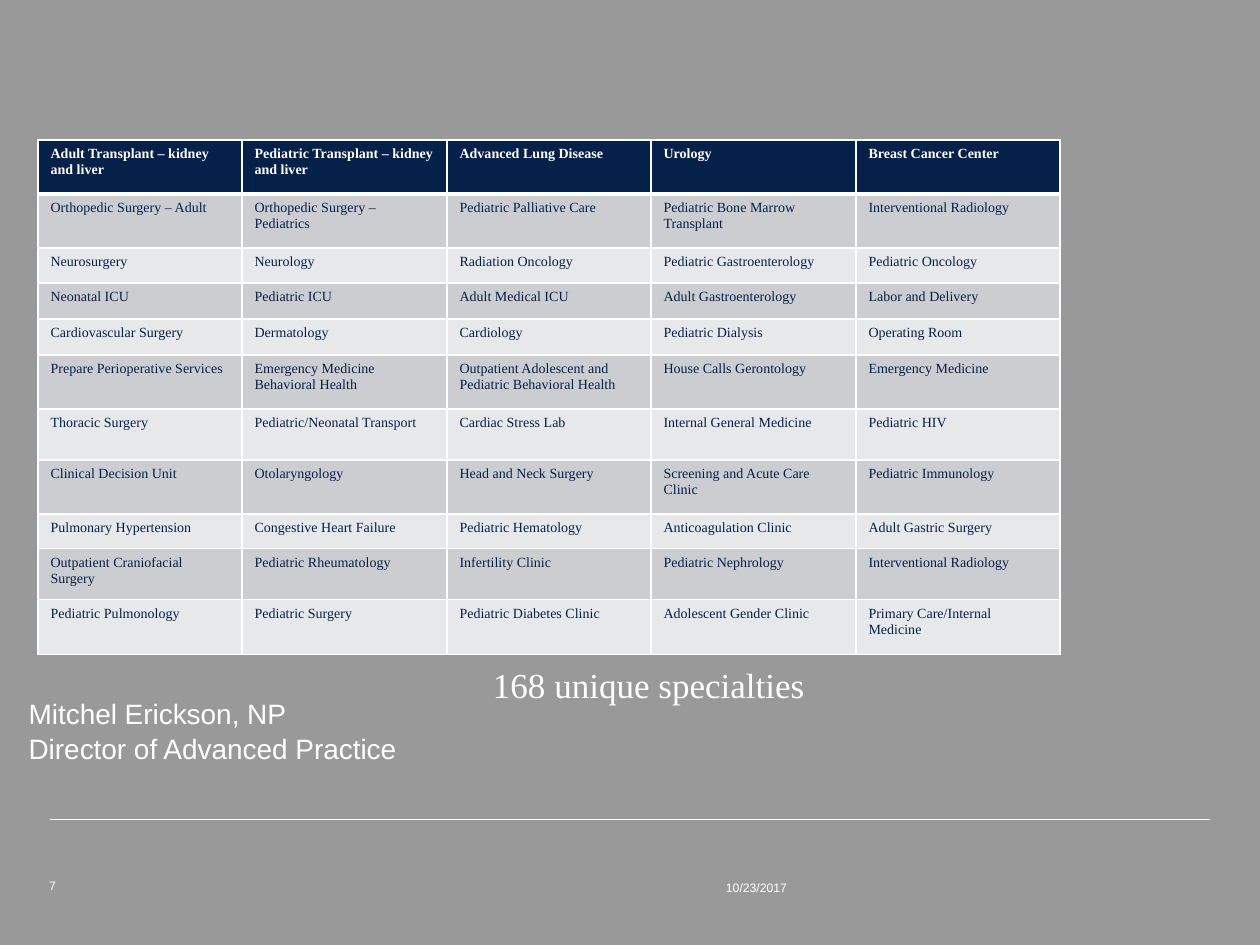
import dataclasses

import lxml.etree
import pptx
import pptx.dml.color
import pptx.enum.shapes
import pptx.enum.text
import pptx.oxml.ns
import pptx.util

EMU_PER_PX = 914400 / 126
NAVY = "052049"
WHITE = "FFFFFF"
BANDS = ("CCCDD0", "E7E8E9")
SANS = "Arial"
SERIF = "Times New Roman"
COLUMN_WIDTHS = (204, 205, 204, 205, 204)


@dataclasses.dataclass(frozen=True)
class SpecialtyRow:
    height: int
    names: tuple[str, ...]


@dataclasses.dataclass(frozen=True)
class Label:
    text: str
    box: tuple[int, int, int, int]
    size: int
    font: str
    anchor: pptx.enum.text.MSO_ANCHOR
    auto_size: pptx.enum.text.MSO_AUTO_SIZE


TOP = pptx.enum.text.MSO_ANCHOR.TOP
BOTTOM = pptx.enum.text.MSO_ANCHOR.BOTTOM
FIXED = pptx.enum.text.MSO_AUTO_SIZE.NONE
GROW = pptx.enum.text.MSO_AUTO_SIZE.SHAPE_TO_FIT_TEXT

SPECIALTIES = (
    SpecialtyRow(54, ("Adult Transplant – kidney and liver", "Pediatric Transplant – kidney and liver",
                      "Advanced Lung Disease", "Urology", "Breast Cancer Center")),
    SpecialtyRow(54, ("Orthopedic Surgery – Adult", "Orthopedic Surgery – Pediatrics",
                      "Pediatric Palliative Care", "Pediatric Bone Marrow Transplant",
                      "Interventional Radiology")),
    SpecialtyRow(35, ("Neurosurgery", "Neurology", "Radiation Oncology",
                      "Pediatric Gastroenterology", "Pediatric Oncology")),
    SpecialtyRow(36, ("Neonatal ICU", "Pediatric ICU", "Adult Medical ICU",
                      "Adult Gastroenterology", "Labor and Delivery")),
    SpecialtyRow(36, ("Cardiovascular Surgery", "Dermatology", "Cardiology",
                      "Pediatric Dialysis", "Operating Room")),
    SpecialtyRow(54, ("Prepare Perioperative Services", "Emergency Medicine Behavioral Health",
                      "Outpatient Adolescent and Pediatric Behavioral Health",
                      "House Calls Gerontology", "Emergency Medicine")),
    SpecialtyRow(51, ("Thoracic Surgery", "Pediatric/Neonatal Transport", "Cardiac Stress Lab",
                      "Internal General Medicine", "Pediatric HIV")),
    SpecialtyRow(54, ("Clinical Decision Unit", "Otolaryngology", "Head and Neck Surgery",
                      "Screening and Acute Care Clinic", "Pediatric Immunology")),
    SpecialtyRow(35, ("Pulmonary Hypertension", "Congestive Heart Failure", "Pediatric Hematology",
                      "Anticoagulation Clinic", "Adult Gastric Surgery")),
    SpecialtyRow(51, ("Outpatient Craniofacial Surgery", "Pediatric Rheumatology",
                      "Infertility Clinic", "Pediatric Nephrology", "Interventional Radiology")),
    SpecialtyRow(55, ("Pediatric Pulmonology", "Pediatric Surgery", "Pediatric Diabetes Clinic",
                      "Adolescent Gender Clinic", "Primary Care/Internal Medicine")),
)

LABELS = (
    Label("10/23/2017", (726, 872, 97, 23), 7, SANS, BOTTOM, FIXED),
    Label("7", (49, 872, 34, 21), 7, SANS, BOTTOM, FIXED),
    Label("168 unique specialties", (493, 663, 514, 43), 20, SERIF, TOP, GROW),
)


def px(length: int) -> int:
    return round(length * EMU_PER_PX)


def color(value: str) -> pptx.dml.color.RGBColor:
    return pptx.dml.color.RGBColor.from_string(value)


def add_child(parent, tag: str, **attributes: str):
    child = lxml.etree.SubElement(parent, pptx.oxml.ns.qn(tag))
    for key, value in attributes.items():
        child.set(key, value)
    return child


def write(paragraph, text: str, *, size: int, font: str, fill: str = WHITE, bold: bool = False) -> None:
    run = paragraph.add_run()
    run.text = text
    run.font.size = pptx.util.Pt(size)
    run.font.name = font
    run.font.bold = bold
    run.font.color.rgb = color(fill)


def add_overlay(slide):
    overlay = slide.shapes.add_shape(
        pptx.enum.shapes.MSO_SHAPE.RECTANGLE, 0, 0, px(1260), px(945))
    overlay.shadow.inherit = False
    overlay.line.fill.background()
    overlay.fill.solid()
    overlay.fill.fore_color.rgb = color("000000")
    black = overlay.element.spPr.find(".//" + pptx.oxml.ns.qn("a:srgbClr"))
    add_child(black, "a:alpha", val="40000")
    return overlay


def add_rule(slide) -> None:
    rule = slide.shapes.add_connector(
        pptx.enum.shapes.MSO_CONNECTOR.STRAIGHT, px(50), px(819), px(1210), px(819))
    rule.line.color.rgb = color(WHITE)
    rule.line.width = pptx.util.Pt(0.25)
    add_child(rule.element.spPr, "a:effectLst")


def add_label(slide, label: Label) -> None:
    frame = slide.shapes.add_textbox(*map(px, label.box)).text_frame
    frame.word_wrap = True
    frame.auto_size = label.auto_size
    frame.vertical_anchor = label.anchor
    frame.margin_left = frame.margin_right = frame.margin_top = frame.margin_bottom = 0
    write(frame.paragraphs[0], label.text, size=label.size, font=label.font)


def fill_presenter(presenter) -> None:
    presenter.left, presenter.top, presenter.width, presenter.height = map(px, (16, 694, 733, 76))
    frame = presenter.text_frame
    frame.word_wrap = True
    frame.auto_size = FIXED
    frame.vertical_anchor = TOP
    for index, text in enumerate(("Mitchel Erickson, NP", "Director of Advanced Practice")):
        paragraph = frame.add_paragraph() if index else frame.paragraphs[0]
        properties = paragraph._p.get_or_add_pPr()
        properties.set("marL", "0")
        properties.set("indent", "0")
        add_child(properties, "a:buNone")
        paragraph.line_spacing = 0.9
        paragraph.space_before = pptx.util.Pt(3 if index else 0)
        write(paragraph, text, size=16, font=SANS)


def add_borders(cell, top: int, bottom: int) -> None:
    properties = cell._tc.get_or_add_tcPr()
    for side, points in (("L", 1), ("R", 1), ("T", top), ("B", bottom)):
        border = add_child(properties, "a:ln" + side, w=str(pptx.util.Pt(points)))
        add_child(add_child(border, "a:solidFill"), "a:srgbClr", val=WHITE)


def add_specialties(slide) -> None:
    table = slide.shapes.add_table(
        len(SPECIALTIES), len(COLUMN_WIDTHS), px(38), px(140),
        px(sum(COLUMN_WIDTHS)), px(sum(row.height for row in SPECIALTIES))).table
    table.horz_banding = False
    for column, width in zip(table.columns, COLUMN_WIDTHS):
        column.width = px(width)
    for index, specialty_row in enumerate(SPECIALTIES):
        header = index == 0
        table.rows[index].height = px(specialty_row.height)
        for cell, name in zip(table.rows[index].cells, specialty_row.names):
            add_borders(cell, top=3 if index == 1 else 1, bottom=3 if header else 1)
            cell.fill.solid()
            cell.fill.fore_color.rgb = color(NAVY if header else BANDS[(index - 1) % 2])
            write(cell.text_frame.paragraphs[0], name, size=8, font=SERIF,
                  fill=WHITE if header else NAVY, bold=header)


def main() -> None:
    presentation = pptx.Presentation()
    presentation.slide_width = px(1260)
    presentation.slide_height = px(945)
    slide = presentation.slides.add_slide(presentation.slide_layouts[1])
    slide.background.fill.solid()
    slide.background.fill.fore_color.rgb = color(WHITE)
    title = slide.shapes.title.element
    title.getparent().remove(title)
    presenter = slide.placeholders[1]
    presenter.element.addprevious(add_overlay(slide).element)
    fill_presenter(presenter)
    add_rule(slide)
    add_specialties(slide)
    for label in LABELS:
        add_label(slide, label)
    presentation.save("out.pptx")


if __name__ == "__main__":
    main()
